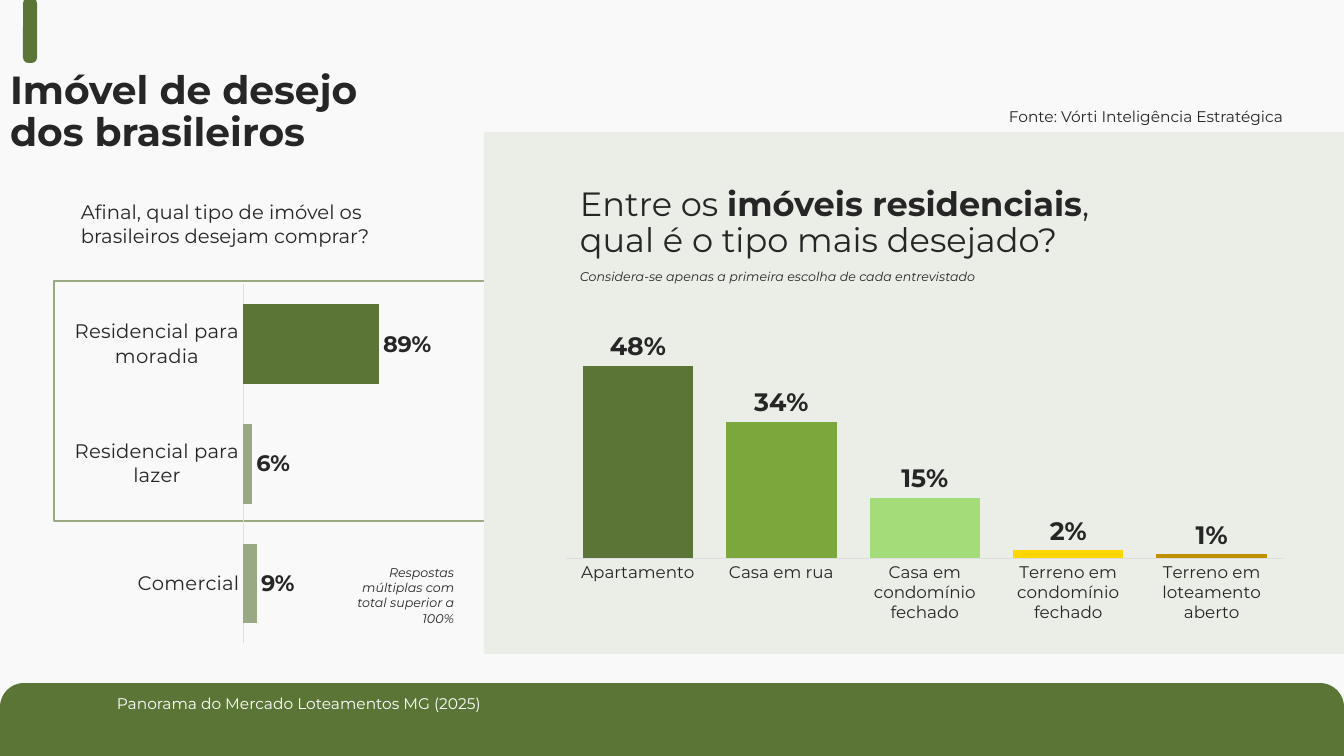
from pptx import Presentation
from pptx.chart.data import CategoryChartData
from pptx.dml.color import RGBColor
from pptx.enum.chart import XL_CHART_TYPE as ChartType, XL_LABEL_POSITION as LabelPosition
from pptx.enum.chart import XL_TICK_MARK as TickMark
from pptx.enum.shapes import MSO_SHAPE as Preset
from pptx.enum.text import MSO_ANCHOR as Anchor, MSO_AUTO_SIZE as AutoSize, PP_ALIGN as Align
from pptx.oxml import parse_xml
from pptx.oxml.ns import nsdecls
from pptx.util import Emu, Pt

PX = 914400 / 100.8
FONT = "Montserrat"

INK = RGBColor(0x26, 0x26, 0x26)
WHITE = RGBColor(0xFF, 0xFF, 0xFF)
PAPER = RGBColor(0xF9, 0xF9, 0xF9)
PANEL = RGBColor(0xEA, 0xEE, 0xE6)
AXIS = RGBColor(0xDE, 0xDE, 0xDE)
DARK_GREEN = RGBColor(0x5B, 0x75, 0x37)
GREEN = RGBColor(0x7B, 0xA8, 0x3D)
LIGHT_GREEN = RGBColor(0xA3, 0xDC, 0x78)
SAGE = RGBColor(0x98, 0xA9, 0x83)
YELLOW = RGBColor(0xFE, 0xD7, 0x02)
OCHRE = RGBColor(0xBF, 0x90, 0x00)


def px(*lengths):
    return [Emu(round(length * PX)) for length in lengths]


class SlideBuilder:
    def __init__(self, slide):
        self.slide = slide
        slide.background.fill.solid()
        slide.background.fill.fore_color.rgb = PAPER

    def style(self, font, size, color=INK, bold=False, italic=False):
        font.name = FONT
        font.size = Pt(size)
        font.color.rgb = color
        font.bold = bold
        font.italic = italic

    def shape(self, box, preset=Preset.RECTANGLE, fill=None, line=None, radius=None):
        shape = self.slide.shapes.add_shape(preset, *px(*box))
        shape.shadow.inherit = False
        if radius is not None:
            shape.adjustments[0] = radius
        if fill is None:
            shape.fill.background()
        else:
            shape.fill.solid()
            shape.fill.fore_color.rgb = fill
        if line is None:
            shape.line.fill.background()
        else:
            shape.line.color.rgb = line
            shape.line.width = Pt(1)

    def fill_text(self, shape, runs, size, anchor=Anchor.TOP, align=Align.LEFT, spacing=1.0,
                  bold_run=None, **look):
        frame = shape.text_frame
        frame.word_wrap = True
        frame.auto_size = AutoSize.NONE
        frame.vertical_anchor = anchor
        paragraph = frame.paragraphs[0]
        paragraph.alignment = align
        paragraph.line_spacing = spacing
        for index, text in enumerate(runs):
            run = paragraph.add_run()
            run.text = text
            self.style(run.font, size, **look)
            if index == bold_run:
                run.font.bold = True

    def title(self, box, text, size):
        shape = self.slide.shapes.title
        shape.left, shape.top, shape.width, shape.height = px(*box)
        self.fill_text(shape, [text], size, anchor=Anchor.MIDDLE, spacing=0.9, bold=True)

    def text(self, box, runs, size, **options):
        self.fill_text(self.slide.shapes.add_textbox(*px(*box)), runs, size, **options)

    def chart(self, kind, box, data, colors, plot_box, maximum, gap, axis_size, label_size,
              overlap=0, reverse=False):
        chart_data = CategoryChartData(number_format="0%")
        chart_data.categories = list(data)
        chart_data.add_series("Series 1", list(data.values()))
        chart = self.slide.shapes.add_chart(kind, *px(*box), chart_data).chart
        chart.has_legend = False
        chart.has_title = False
        self.style(chart.font, 10)

        category_axis = chart.category_axis
        category_axis.major_tick_mark = TickMark.NONE
        category_axis.has_major_gridlines = False
        category_axis.reverse_order = reverse
        category_axis.format.line.color.rgb = AXIS
        category_axis.format.line.width = Pt(0.75)
        self.style(category_axis.tick_labels.font, axis_size)

        value_axis = chart.value_axis
        value_axis.minimum_scale = 0
        value_axis.maximum_scale = maximum
        value_axis.has_major_gridlines = False
        value_axis.visible = False

        plot = chart.plots[0]
        plot.gap_width = gap
        plot.overlap = overlap
        plot.vary_by_categories = False
        plot.has_data_labels = True
        labels = plot.data_labels
        labels.show_value = True
        labels.number_format = "0%"
        labels.number_format_is_linked = False
        labels.position = LabelPosition.OUTSIDE_END
        self.style(labels.font, label_size, bold=True)

        for index, color in enumerate(colors):
            fill = plot.series[0].points[index].format.fill
            fill.solid()
            fill.fore_color.rgb = color
        self.place_plot(chart, plot_box)

    def place_plot(self, chart, plot_box):
        plot_area = chart.element.xpath(".//c:plotArea")[0]
        for layout in plot_area.xpath("./c:layout"):
            plot_area.remove(layout)
        sizes = "".join(f'<c:{tag} val="{value}"/>' for tag, value in zip("xywh", plot_box))
        plot_area.insert(0, parse_xml(
            f'<c:layout {nsdecls("c")}><c:manualLayout><c:layoutTarget val="inner"/>'
            f'<c:xMode val="edge"/><c:yMode val="edge"/>{sizes}</c:manualLayout></c:layout>'))


def main():
    presentation = Presentation()
    presentation.slide_width, presentation.slide_height = px(1344, 756)
    builder = SlideBuilder(presentation.slides.add_slide(presentation.slide_layouts[5]))

    # Footer band, frame around the residential answers, right panel
    builder.shape((0, 683, 1344, 73), Preset.ROUND_2_SAME_RECTANGLE, DARK_GREEN, radius=0.33)
    builder.shape((54, 281, 459, 240), line=SAGE)
    builder.shape((484, 132, 860, 522), fill=PANEL)

    # Title with its accent bar
    builder.shape((23, -2, 14, 65), Preset.ROUNDED_RECTANGLE, DARK_GREEN, radius=0.39)
    builder.title((0, 64, 390, 97), "Imóvel de desejo dos brasileiros", 28)

    # Charts
    builder.chart(
        ChartType.COLUMN_CLUSTERED, (544, 285, 740, 360),
        {"Apartamento": 0.48, "Casa em rua": 0.34, "Casa em condomínio fechado": 0.15,
         "Terreno em condomínio fechado": 0.02, "Terreno em loteamento aberto": 0.01},
        [DARK_GREEN, GREEN, LIGHT_GREEN, YELLOW, OCHRE],
        plot_box=(0.03, 0.09, 0.97, 0.67), maximum=0.6, gap=30, axis_size=12, label_size=18)
    builder.chart(
        ChartType.BAR_CLUSTERED, (74, 277, 413, 367),
        {"Residencial para moradia": 0.89, "Residencial para lazer": 0.06, "Comercial": 0.09},
        [DARK_GREEN, SAGE, SAGE],
        plot_box=(0.41, 0.02, 0.37, 0.98), maximum=1, gap=50, axis_size=14, label_size=16,
        overlap=30, reverse=True)

    # Questions and notes
    builder.text((71, 195, 368, 57),
                 ["Afinal, qual tipo de imóvel os brasileiros desejam comprar?"], 14)
    builder.text((320, 560, 144, 56), ["Respostas múltiplas com total superior a 100%"], 9,
                 align=Align.RIGHT, italic=True)
    builder.text((570, 162, 559, 123),
                 ["Entre os ", "imóveis residenciais", ", qual é o tipo mais desejado?"], 24,
                 anchor=Anchor.MIDDLE, spacing=0.9, bold_run=1)
    builder.text((570, 264, 429, 25),
                 ["Considera-se apenas a primeira escolha de cada entrevistado"], 9, italic=True)

    # Source and footer
    builder.text((999, 102, 314, 29), ["Fonte: Vórti Inteligência Estratégica"], 11)
    builder.text((107, 689, 708, 29), ["Panorama do Mercado Loteamentos MG (2025)"], 11,
                 color=WHITE)

    presentation.save("out.pptx")


if __name__ == "__main__":
    main()
